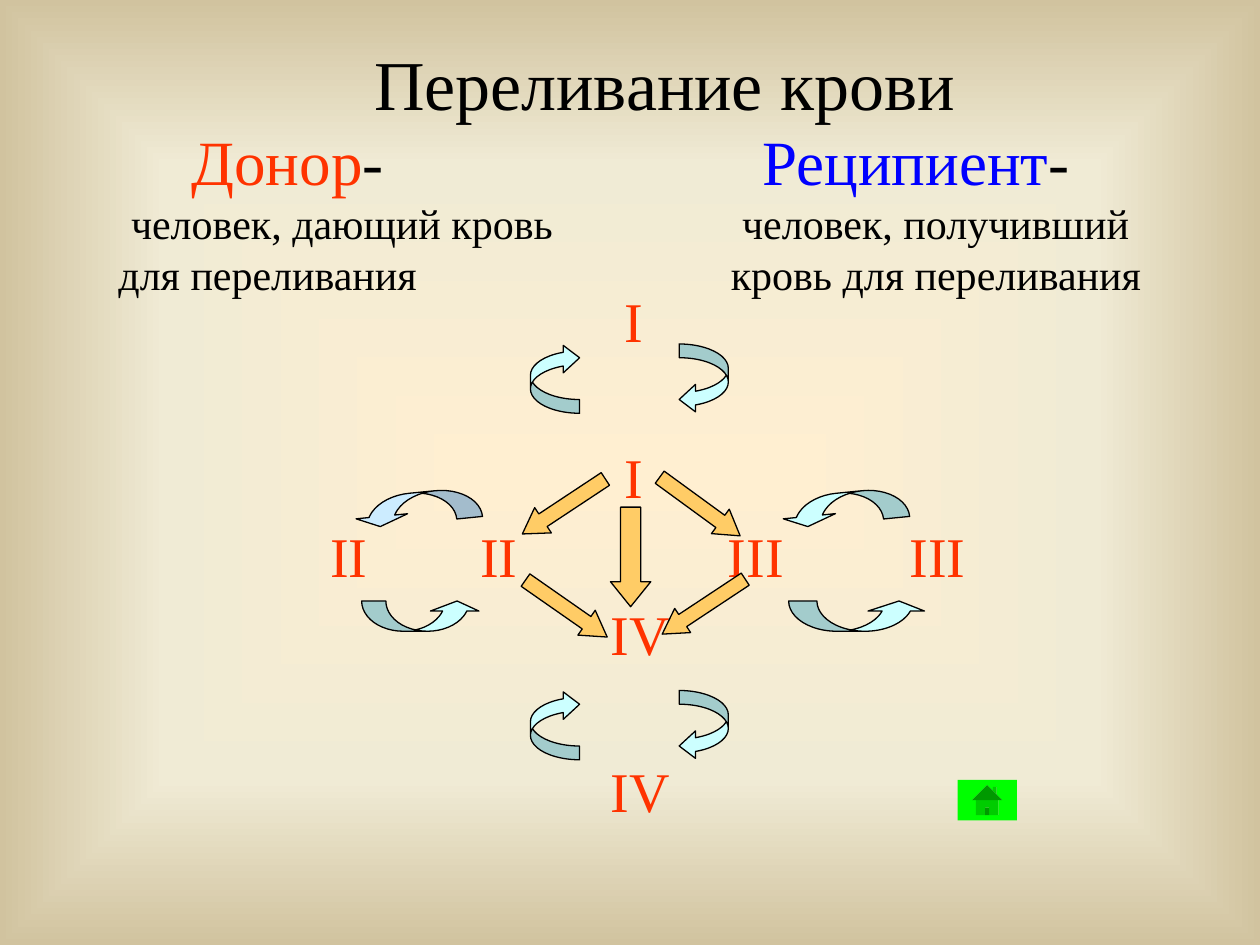
from lxml import etree
from pptx import Presentation
from pptx.dml.color import RGBColor
from pptx.enum import shapes, text
from pptx.oxml.ns import qn
from pptx.util import Inches, Pt

FONT = "Times New Roman"
BLACK = RGBColor(0x00, 0x00, 0x00)
RED = RGBColor(0xFF, 0x33, 0x00)
BLUE = RGBColor(0x00, 0x00, 0xFF)
CYAN = RGBColor(0xCC, 0xFF, 0xFF)
PALE_BLUE = RGBColor(0xCC, 0xEC, 0xFF)
ORANGE = RGBColor(0xFF, 0xCC, 0x66)
GREEN = RGBColor(0x00, 0xFF, 0x00)
BACKGROUND_STOPS = [(0, "FFEFD1"), (65, "F0EBD5"), (100, "D1C39F")]

Kind = shapes.MSO_SHAPE
NUMERAL_TOP, ROW_PITCH = 2.27, 0.622

# Blood groups: numeral, centre x, row
BLOOD_GROUPS = [
    ("I", 5.03, 0),
    ("I", 5.03, 2),
    ("II", 2.77, 3), ("II", 3.96, 3), ("III", 6.0, 3), ("III", 7.44, 3),
    ("IV", 5.08, 4),
    ("IV", 5.08, 6),
]

# Transfusion between groups: left, top, width, height, rotation, head length
STRAIGHT_ARROWS = [
    (4.08, 3.9, 0.79, 0.24, 326.5, 0.82),
    (4.61, 4.26, 0.79, 0.32, 270, 0.62),
    (4.1, 4.71, 0.79, 0.24, 214.9, 0.83),
    (5.16, 3.9, 0.79, 0.24, 216.1, 0.81),
    (5.19, 4.7, 0.79, 0.23, 326.5, 0.85),
]


def set_background(slide):
    slide.background.fill.gradient()
    gradient = slide.element.find(".//" + qn("a:gradFill"))
    for child in list(gradient):
        gradient.remove(child)
    stops = etree.SubElement(gradient, qn("a:gsLst"))
    for position, color in BACKGROUND_STOPS:
        stop = etree.SubElement(stops, qn("a:gs"), pos=str(position * 1000))
        etree.SubElement(stop, qn("a:srgbClr"), val=color)
    shade = etree.SubElement(gradient, qn("a:path"))
    shade.set("path", "shape")
    etree.SubElement(shade, qn("a:fillToRect"),
                     {side: "50000" for side in "ltrb"})


def add_text(slide, left, top, width, height, size, runs,
             align=text.PP_ALIGN.LEFT):
    box = slide.shapes.add_textbox(Inches(left), Inches(top),
                                   Inches(width), Inches(height))
    frame = box.text_frame
    frame.word_wrap = True
    frame.margin_left = frame.margin_right = 0
    frame.margin_top = frame.margin_bottom = 0
    paragraph = frame.paragraphs[0]
    paragraph.alignment = align
    paragraph.font.name = FONT
    paragraph.font.size = Pt(size)
    for words, color in runs:
        run = paragraph.add_run()
        run.text = words
        run.font.color.rgb = color
    return paragraph


def add_definition(slide, left, term, color, term_left, meaning):
    add_text(slide, term_left, 0.97, 3, 0.6, 36, [(term, color), ("-", BLACK)])
    for row, (indent, line) in enumerate(meaning):
        add_text(slide, left + indent, 1.57 + 0.4 * row, 3.7, 0.4, 24,
                 [(line, BLACK)])


def add_shape(slide, kind, left, top, width, height, color,
              rotation=0, adjustments=(), outlined=True):
    shape = slide.shapes.add_shape(kind, Inches(left), Inches(top),
                                   Inches(width), Inches(height))
    shape.shadow.inherit = False
    shape.rotation = rotation
    for index, value in enumerate(adjustments):
        shape.adjustments[index] = value
    shape.fill.solid()
    shape.fill.fore_color.rgb = color
    if outlined:
        shape.line.color.rgb = BLACK
        shape.line.width = Pt(0.75)
    else:
        shape.line.fill.background()


def add_vertical_loop(slide, top):
    """Pair of curved arrows between a group and the same group below."""
    bend = (0.28, 0.56, 0.333)
    add_shape(slide, Kind.CURVED_DOWN_ARROW, 4.13, top + 0.08, 0.55, 0.39,
              CYAN, 270, bend)
    add_shape(slide, Kind.CURVED_LEFT_ARROW, 5.39, top, 0.39, 0.55,
              CYAN, 0, bend)


def add_horizontal_loop(slide, upper_left, upper_color, upper_bend,
                        lower_left, lower_width, lower_bend):
    """Pair of curved arrows between a group and the same group beside it."""
    add_shape(slide, Kind.CURVED_RIGHT_ARROW, upper_left, 3.52, 0.24, 1.02,
              upper_color, 84.3, (upper_bend, 2 * upper_bend, 0.333))
    add_shape(slide, Kind.CURVED_UP_ARROW, lower_left, 4.77, lower_width, 0.24,
              CYAN, 0, (lower_bend, 2 * lower_bend, 0.333))


def main():
    presentation = Presentation()
    presentation.slide_width = Inches(10)
    presentation.slide_height = Inches(7.5)
    slide = presentation.slides.add_slide(presentation.slide_layouts[6])
    set_background(slide)

    # Title and definitions
    add_text(slide, 2.97, 0.32, 5.5, 0.65, 40, [("Переливание крови", BLACK)])
    add_definition(slide, 0.94, "Донор", RED, 1.52,
                   [(0.1, "человек, дающий кровь"), (0, "для переливания")])
    add_definition(slide, 5.8, "Реципиент", BLUE, 6.05,
                   [(0.09, "человек, получивший"),
                    (0, "кровь для переливания")])

    # Blood groups
    for numeral, center, row in BLOOD_GROUPS:
        add_text(slide, center - 0.5, NUMERAL_TOP + row * ROW_PITCH, 1, 0.52,
                 32, [(numeral, RED)], text.PP_ALIGN.CENTER)

    # Transfusion within a group
    for top in (2.73, 5.48):
        add_vertical_loop(slide, top)
    add_horizontal_loop(slide, 3.19, PALE_BLUE, 0.854, 2.87, 0.95, 0.801)
    add_horizontal_loop(slide, 6.58, CYAN, 0.866, 6.26, 1.1, 0.934)

    # Transfusion between groups
    for left, top, width, height, rotation, head in STRAIGHT_ARROWS:
        add_shape(slide, Kind.LEFT_ARROW, left, top, width, height,
                  ORANGE, rotation, (0.5, head))

    # Home button
    add_shape(slide, Kind.ACTION_BUTTON_HOME, 7.6, 6.19, 0.47, 0.32,
              GREEN, outlined=False)

    presentation.save("out.pptx")


if __name__ == "__main__":
    main()
